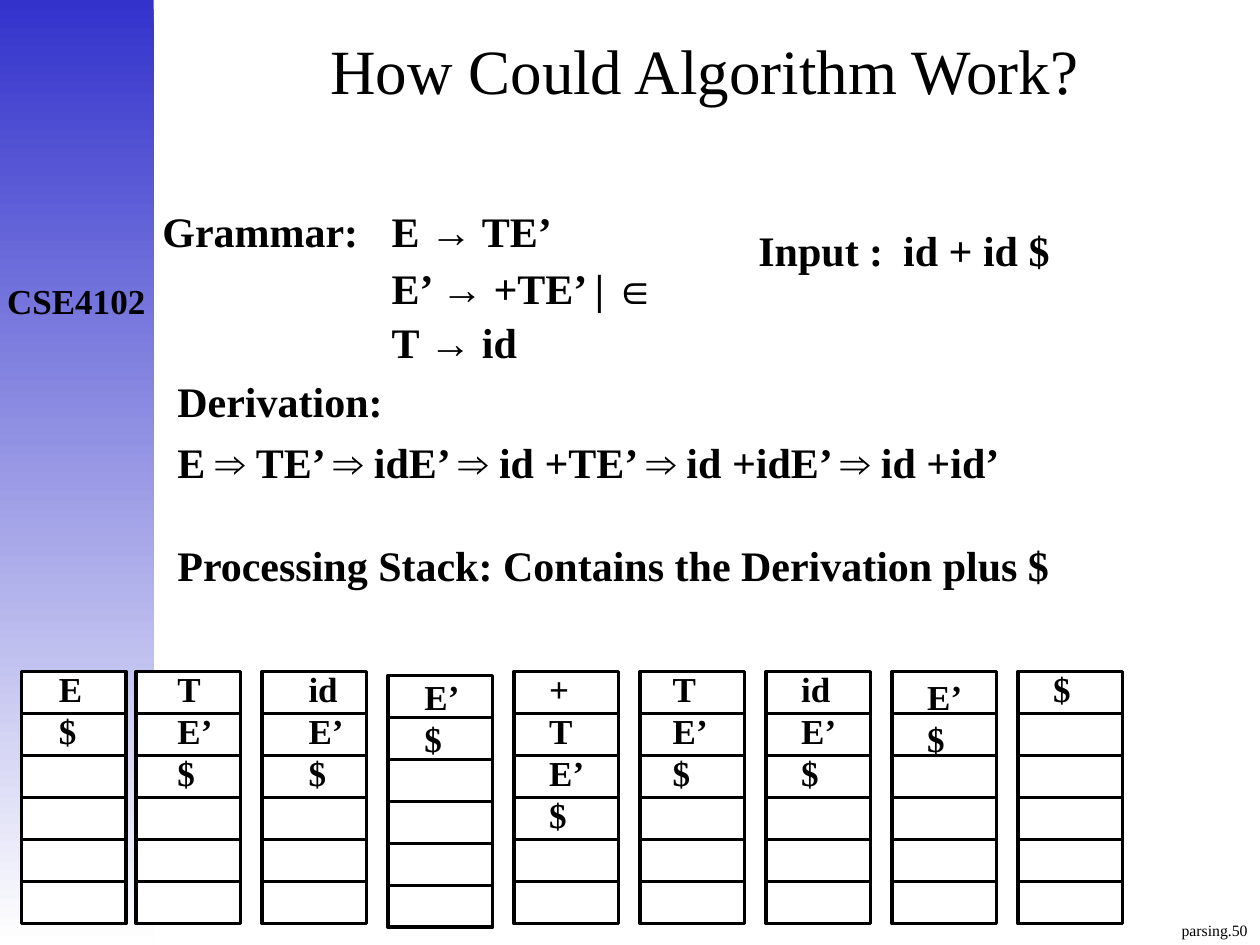
from pptx import Presentation
from pptx import util as u
from pptx.dml.color import RGBColor
from pptx.enum import shapes, text
from pptx.oxml.ns import qn
from lxml import etree

COLORS = {"ink": "000000", "paper": "FFFFFF", "band": "3333CC"}
FONT = "Times New Roman"
ROWS = 6
STACK_WIDTH, STACK_HEIGHT = 0.83, 2

# left, top, text left, text top, symbols from the top of the stack
STACKS = [
    (0.17, 5.33, 0.37, 5.25, ["E", "$"]),
    (1.08, 5.33, 1.31, 5.25, ["T", "E’", "$"]),
    (2.08, 5.33, 2.35, 5.25, ["id", "E’", "$"]),
    (3.08, 5.36, 3.27, 5.31, ["E’", "$"]),
    (4.08, 5.33, 4.26, 5.25, ["+", "T", "E’", "$"]),
    (5.08, 5.33, 5.24, 5.25, ["T", "E’", "$"]),
    (6.08, 5.33, 6.26, 5.25, ["id", "E’", "$"]),
    (7.08, 5.33, 7.26, 5.31, ["E’", "$"]),
    (8.08, 5.33, 8.26, 5.25, ["$"]),
]


def color(name):
    return RGBColor.from_string(COLORS[name])


def add_text(slide, box, lines, size, bold=True, align=text.PP_ALIGN.LEFT, wrap=True):
    """Place a text box with one paragraph per line and return its frame."""
    frame = slide.shapes.add_textbox(*map(u.Inches, box)).text_frame
    frame.word_wrap = wrap
    frame.text = "\n".join(lines)
    for paragraph in frame.paragraphs:
        paragraph.alignment = align
        for run in paragraph.runs:
            run.font.name = FONT
            run.font.size = u.Pt(size)
            run.font.bold = bold
            run.font.color.rgb = color("ink")
    return frame


def set_indent(paragraph, margin, first):
    """Set the left margin and the first-line indent, in inches."""
    properties = paragraph._p.get_or_add_pPr()
    properties.set("marL", str(u.Inches(margin)))
    properties.set("indent", str(u.Inches(first)))


def add_sidebar(slide, box):
    left, top, width, height = box
    band = slide.shapes.add_shape(shapes.MSO_SHAPE.RECTANGLE, *map(u.Inches, box))
    band.shadow.inherit = False
    band.line.fill.background()
    band.fill.gradient()
    band.fill.gradient_angle = 270
    for stop, name in zip(band.fill.gradient_stops, ("band", "paper")):
        stop.color.rgb = color(name)
    add_text(slide, (left - 0.05, top + 2.17, width + 0.09, 0.44), ["CSE4102"], 20,
             align=text.PP_ALIGN.CENTER, wrap=False)


def add_title(slide, box):
    frame = add_text(slide, box, ["How Could Algorithm Work?"], 36, bold=False,
                     align=text.PP_ALIGN.CENTER)
    frame.vertical_anchor = text.MSO_ANCHOR.MIDDLE
    frame.paragraphs[0].line_spacing = 0.8


def add_explanation(slide, box):
    left, top, width, height = box

    # Grammar rules, aligned behind the label
    rules = ["Grammar:\tE → TE’", "E’ → +TE’ | ∈", "T → id"]
    grammar = add_text(slide, (left, top, 4.25, 1.38), rules, 24).paragraphs
    set_indent(grammar[0], 1.82, -1.82)
    for paragraph in grammar[1:]:
        set_indent(paragraph, 1.82, 0)
        paragraph.line_spacing = 0.6
        paragraph.space_before = u.Pt(13.8)

    # Input string
    source = add_text(slide, (left + 4.73, top + 0.15, 3.42, 0.5), ["Input :\tid + id $"], 24)
    set_indent(source.paragraphs[0], 1.15, -1.15)

    # Derivation and the heading of the stacks
    steps = ["Derivation:", "E ⇒ TE’ ⇒ idE’ ⇒ id +TE’ ⇒ id +idE’ ⇒ id +id’"]
    derivation = add_text(slide, (left + 0.12, top + 1.35, width, 0.99), steps, 24)
    derivation.paragraphs[1].space_before = u.Pt(6)
    add_text(slide, (left + 0.12, top + 2.65, width, 0.5),
             ["Processing Stack: Contains the Derivation plus $"], 24)


def add_stack(slide, box, filled):
    left, top, width, height = box
    group = slide.shapes.add_group_shape()
    frame = group.shapes.add_shape(shapes.MSO_SHAPE.RECTANGLE, *map(u.Inches, box))
    frame.shadow.inherit = False
    if filled:
        frame.fill.solid()
        frame.fill.fore_color.rgb = color("paper")
    else:
        frame.fill.background()
    frame.line.color.rgb = color("ink")
    frame.line.width = u.Pt(2)

    # Row dividers; the middle one meets the connection sites of the frame
    for row in range(1, ROWS):
        y = u.Inches(top + row * height / ROWS)
        divider = group.shapes.add_connector(
            shapes.MSO_CONNECTOR.STRAIGHT, u.Inches(left), y, u.Inches(left + width), y)
        divider.line.color.rgb = color("ink")
        divider.line.width = u.Pt(2)
        etree.SubElement(divider._element.spPr, qn("a:effectLst"))
        if row * 2 == ROWS:
            divider.begin_connect(frame, 1)
            divider.end_connect(frame, 3)


def add_symbols(slide, left, top, symbols):
    width = 0.48 if "E’" in symbols else 0.37
    add_text(slide, (left, top, width, 0.1 + 0.335 * len(symbols)), symbols, 20, wrap=False)


def main():
    presentation = Presentation()
    presentation.slide_width, presentation.slide_height = u.Inches(10), u.Inches(7.5)
    slide = presentation.slides.add_slide(presentation.slide_layouts[6])

    add_sidebar(slide, (0, 0, 1.22, 7.5))
    add_text(slide, (8.85, 7.26, 1.15, 0.25), ["parsing.50"], 9, bold=False,
             align=text.PP_ALIGN.RIGHT)
    add_title(slide, (1.18, 0, 8.82, 1.22))
    add_explanation(slide, (1.19, 1.58, 8.43, 3.15))

    # The first two stacks cover the sidebar, so they are filled
    for index, (left, top, text_left, text_top, symbols) in enumerate(STACKS):
        add_stack(slide, (left, top, STACK_WIDTH, STACK_HEIGHT), filled=index < 2)
        add_symbols(slide, text_left, text_top, symbols)

    presentation.save("out.pptx")


if __name__ == "__main__":
    main()
